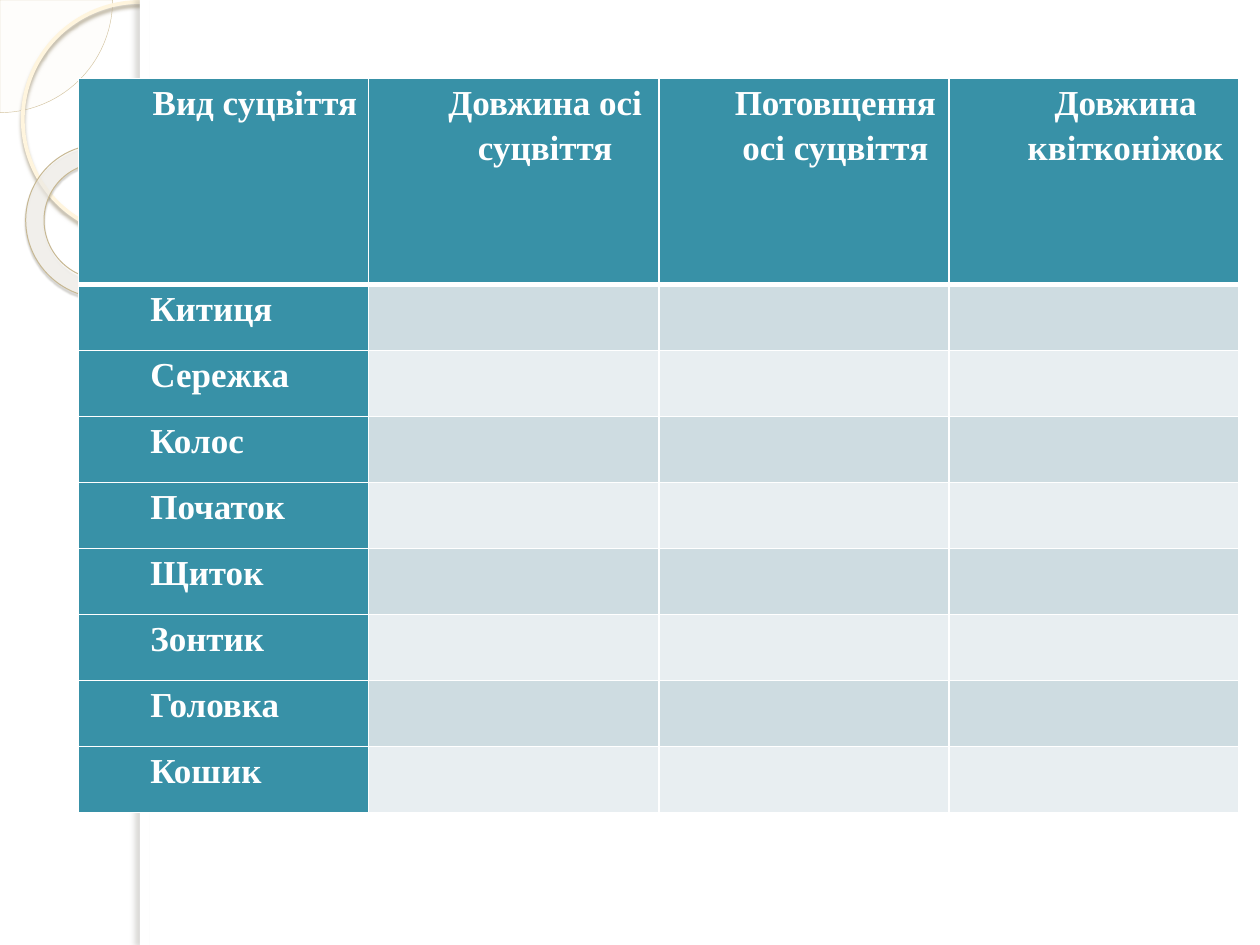
import pptx
import pptx.util
import pptx.dml.color
import pptx.enum.shapes
import pptx.enum.text
import pptx.oxml
import pptx.oxml.ns

Cm = pptx.util.Cm
Pt = pptx.util.Pt
RGBColor = pptx.dml.color.RGBColor
SHAPES = pptx.enum.shapes.MSO_SHAPE
ALIGN = pptx.enum.text.PP_ALIGN

HEADERS = ["Вид суцвіття", "Довжина осі суцвіття",
           "Потовщення осі суцвіття", "Довжина квітконіжок"]
INFLORESCENCES = ["Китиця", "Сережка", "Колос", "Початок",
                  "Щиток", "Зонтик", "Головка", "Кошик"]

FONT = "Times New Roman"
WHITE = RGBColor(0xFF, 0xFF, 0xFF)
TEAL = RGBColor(0x38, 0x91, 0xA7)
BANDS = [RGBColor(0xCE, 0xDC, 0xE1), RGBColor(0xE8, 0xEE, 0xF1)]
CREAM = RGBColor(0xFE, 0xFA, 0xF4)
SAND = RGBColor(0xD3, 0xC3, 0x9F)
IVORY = RGBColor(0xFF, 0xF5, 0xDE)
PEARL = RGBColor(0xFF, 0xFD, 0xF9)
KHAKI = RGBColor(0xC7, 0xB8, 0x93)
TAUPE = RGBColor(0xB0, 0xA6, 0x8F)
BROWN = RGBColor(0x5A, 0x54, 0x44)
GREY = RGBColor(0x73, 0x6F, 0x63)

# kind, (left, top, width, height) in cm, fill, opacity %, line (colour, pt),
# shadow (colour, opacity %, blur pt, distance pt, angle), adjustments, rotation
DECORATIONS = [
    (SHAPES.PIE, (-2.27, -2.27, 4.54, 4.54), CREAM, 33, (SAND, 0.25),
     None, [0, 54.02], 0),
    (SHAPES.OVAL, (0.46, 0.04, 4.73, 4.73), None, 100, (IVORY, 2.15),
     (TAUPE, 85, 2, 2, 90), [], 0),
    (SHAPES.DONUT, (0.51, 2.92, 3.12, 3.08), PEARL, 60, (KHAKI, 0.58),
     (BROWN, 35, 1, 1.2, 75), [0.12], 38.6),
    (SHAPES.RECTANGLE, (2.82, 0, 22.58, 19.05), WHITE, 100, None, None, [], 0),
    (SHAPES.RECTANGLE, (2.82, 0, 0.2, 19.05), WHITE, 100, None,
     (GREY, 25, 3, 3, 180), [], 0),
]

TABLE_LEFT = TABLE_TOP = 1.58
COLUMN_WIDTH = 5.85
HEADER_HEIGHT, ROW_HEIGHT = 4.16, 1.33


def xml(text):
    namespace = pptx.oxml.ns.nsdecls("a")
    return pptx.oxml.parse_xml(text.replace(" ", f" {namespace} ", 1))


def add_shadow(shape, colour, opacity, blur, distance, angle):
    effects = shape._element.spPr.find(pptx.oxml.ns.qn("a:effectLst"))
    effects.append(xml(
        f'<a:outerShdw blurRad="{Pt(blur)}" dist="{Pt(distance)}" '
        f'dir="{angle * 60000}" algn="ctr" rotWithShape="0">'
        f'<a:srgbClr val="{colour}"><a:alpha val="{opacity * 1000}"/>'
        '</a:srgbClr></a:outerShdw>'))


def add_decoration(page, kind, place, fill, opacity, line, shadow, adjustments, rotation):
    shape = page.shapes.add_shape(kind, *[Cm(length) for length in place])
    shape.shadow.inherit = False
    shape.rotation = rotation
    for index, value in enumerate(adjustments):
        shape.adjustments[index] = value
    if fill is None:
        shape.fill.background()
    else:
        shape.fill.solid()
        shape.fill.fore_color.rgb = fill
        if opacity < 100:
            colour = shape._element.spPr.find(".//" + pptx.oxml.ns.qn("a:srgbClr"))
            colour.append(xml(f'<a:alpha val="{opacity * 1000}"/>'))
    if line is None:
        shape.line.fill.background()
    else:
        shape.line.color.rgb = line[0]
        shape.line.width = Pt(line[1])
    if shadow:
        add_shadow(shape, *shadow)


def style_cell(cell, fill, top=1, bottom=1):
    """Draw white borders, in points, then fill the cell."""
    properties = cell._tc.get_or_add_tcPr()
    for side, width in zip("LRTB", (1, 1, top, bottom)):
        properties.append(xml(
            f'<a:ln{side} w="{Pt(width)}"><a:solidFill>'
            f'<a:srgbClr val="{WHITE}"/></a:solidFill></a:ln{side}>'))
    cell.fill.solid()
    cell.fill.fore_color.rgb = fill
    cell.margin_left = cell.margin_right = Cm(0.18)
    cell.margin_top = cell.margin_bottom = 0


def write_cell(cell, text, alignment):
    cell.text_frame.text = text
    para = cell.text_frame.paragraphs[0]
    para.alignment = alignment
    para.line_spacing = 1.15
    para._p.get_or_add_pPr().set("marL", str(Cm(1.27)))
    font = para.runs[0].font
    font.name, font.size, font.bold = FONT, Pt(20), True
    font.color.rgb = WHITE


def add_inflorescence_table(page):
    row_count, column_count = len(INFLORESCENCES) + 1, len(HEADERS)
    table = page.shapes.add_table(
        row_count, column_count, Cm(TABLE_LEFT), Cm(TABLE_TOP),
        Cm(COLUMN_WIDTH * column_count),
        Cm(HEADER_HEIGHT + ROW_HEIGHT * len(INFLORESCENCES))).table
    for column in table.columns:
        column.width = Cm(COLUMN_WIDTH)
    for index, row in enumerate(table.rows):
        row.height = Cm(ROW_HEIGHT if index else HEADER_HEIGHT)

    for column, header in enumerate(HEADERS):
        cell = table.cell(0, column)
        style_cell(cell, TEAL, bottom=3)
        write_cell(cell, header, ALIGN.CENTER)
    for row, name in enumerate(INFLORESCENCES, start=1):
        for column in range(column_count):
            fill = BANDS[(row - 1) % 2] if column else TEAL
            style_cell(table.cell(row, column), fill, top=3 if row == 1 else 1)
        write_cell(table.cell(row, 0), name, ALIGN.JUSTIFY)


def main():
    deck = pptx.Presentation()
    deck.slide_width, deck.slide_height = Cm(25.4), Cm(19.05)
    page = deck.slides.add_slide(deck.slide_layouts[6])
    for decoration in DECORATIONS:
        add_decoration(page, *decoration)
    add_inflorescence_table(page)
    deck.save("out.pptx")


if __name__ == "__main__":
    main()
